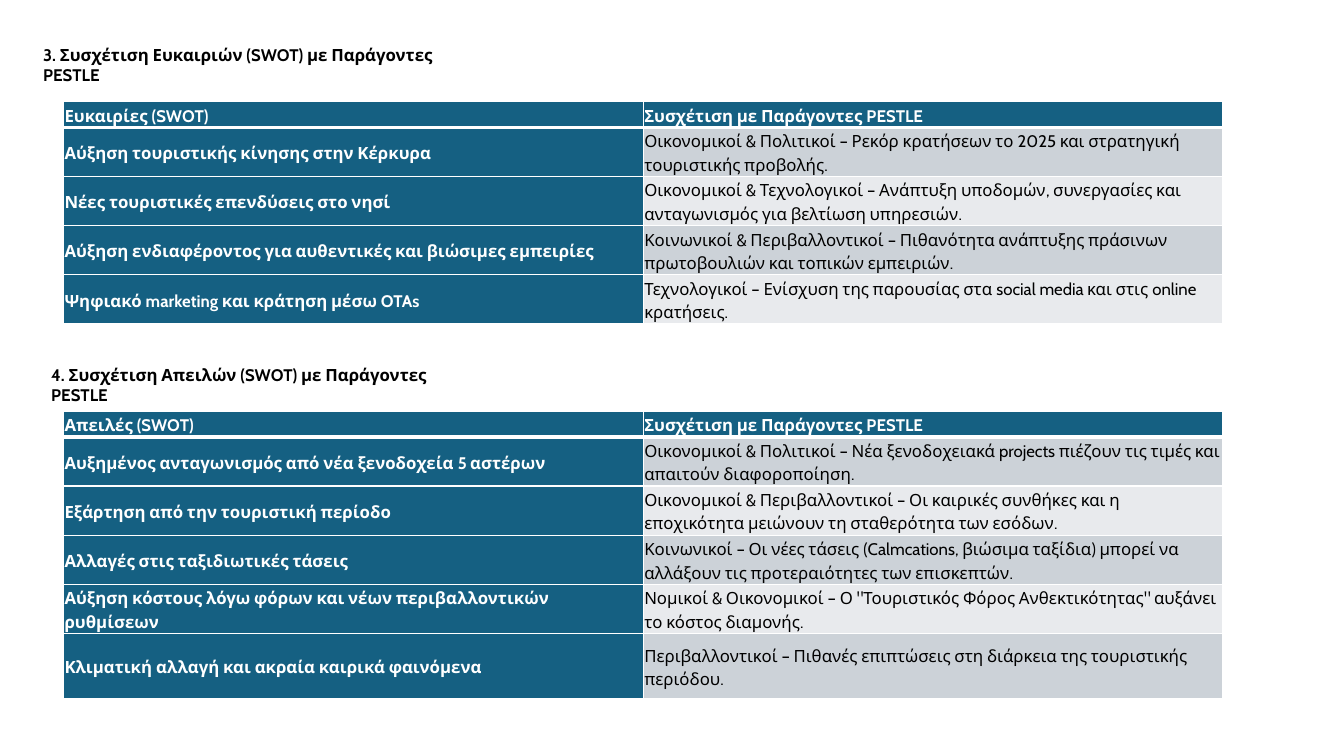
import lxml.etree
import pptx
import pptx.dml.color
import pptx.enum.text
import pptx.oxml.ns
import pptx.util

Inches = pptx.util.Inches
COLORS = {
    "white": "FFFFFF",
    "black": "000000",
    "blue": "156082",
    "gray": "CCD2D8",
    "light": "E8EAED",
}
PESTLE_HEADER = "Συσχέτιση με Παράγοντες PESTLE"
OPPORTUNITIES = [
    ("Ευκαιρίες (SWOT)", PESTLE_HEADER),
    ("Αύξηση τουριστικής κίνησης στην Κέρκυρα",
     "Οικονομικοί & Πολιτικοί – Ρεκόρ κρατήσεων το 2025 και στρατηγική τουριστικής προβολής."),
    ("Νέες τουριστικές επενδύσεις στο νησί",
     "Οικονομικοί & Τεχνολογικοί – Ανάπτυξη υποδομών, συνεργασίες και ανταγωνισμός για βελτίωση υπηρεσιών."),
    ("Αύξηση ενδιαφέροντος για αυθεντικές και βιώσιμες εμπειρίες",
     "Κοινωνικοί & Περιβαλλοντικοί – Πιθανότητα ανάπτυξης πράσινων πρωτοβουλιών και τοπικών εμπειριών."),
    ("Ψηφιακό marketing και κράτηση μέσω OTAs",
     "Τεχνολογικοί – Ενίσχυση της παρουσίας στα social media και στις online κρατήσεις."),
]
THREATS = [
    ("Απειλές (SWOT)", PESTLE_HEADER),
    ("Αυξημένος ανταγωνισμός από νέα ξενοδοχεία 5 αστέρων",
     "Οικονομικοί & Πολιτικοί – Νέα ξενοδοχειακά projects πιέζουν τις τιμές και απαιτούν διαφοροποίηση."),
    ("Εξάρτηση από την τουριστική περίοδο",
     "Οικονομικοί & Περιβαλλοντικοί – Οι καιρικές συνθήκες και η εποχικότητα μειώνουν τη σταθερότητα των εσόδων."),
    ("Αλλαγές στις ταξιδιωτικές τάσεις",
     "Κοινωνικοί – Οι νέες τάσεις (Calmcations, βιώσιμα ταξίδια) μπορεί να αλλάξουν τις προτεραιότητες των επισκεπτών."),
    ("Αύξηση κόστους λόγω φόρων και νέων περιβαλλοντικών ρυθμίσεων",
     "Νομικοί & Οικονομικοί – Ο \"Τουριστικός Φόρος Ανθεκτικότητας\" αυξάνει το κόστος διαμονής."),
    ("Κλιματική αλλαγή και ακραία καιρικά φαινόμενα",
     "Περιβαλλοντικοί – Πιθανές επιπτώσεις στη διάρκεια της τουριστικής περιόδου."),
]


def rgb(name):
    return pptx.dml.color.RGBColor.from_string(COLORS[name])


def write_text(frame, text, *, font, size, color, bold, spacing=None, after=None):
    para = frame.paragraphs[0]
    para.line_spacing = spacing
    para.space_after = None if after is None else pptx.util.Pt(after)
    span = para.add_run()
    span.text = text
    span.font.name = font
    span.font.size = pptx.util.Pt(size)
    span.font.bold = bold
    span.font.color.rgb = rgb(color)


def add_border(cell, side, width):
    qn = pptx.oxml.ns.qn
    properties = cell._tc.get_or_add_tcPr()
    line = lxml.etree.SubElement(properties, qn(f"a:ln{side}"), w=str(pptx.util.Pt(width)))
    fill = lxml.etree.SubElement(line, qn("a:solidFill"))
    lxml.etree.SubElement(fill, qn("a:srgbClr"), val=COLORS["white"])


class SwotPage:
    font = "Cabin"
    size = 12
    middle = pptx.enum.text.MSO_ANCHOR.MIDDLE

    def __init__(self, deck):
        self.page = deck.slides.add_slide(deck.slide_layouts[6])

    def heading(self, text, left, top, width):
        box = self.page.shapes.add_textbox(Inches(left), Inches(top), Inches(width), Inches(0.3))
        frame = box.text_frame
        frame.word_wrap = True
        frame.auto_size = pptx.enum.text.MSO_AUTO_SIZE.NONE
        frame.vertical_anchor = self.middle
        write_text(frame, text, font=self.font, size=self.size, color="black", bold=True)

    def table(self, rows, top, heights):
        frame = self.page.shapes.add_table(
            len(rows), 2, Inches(0.63), Inches(top), Inches(11.5), Inches(sum(heights)))
        table = frame.table
        for row, (texts, height) in enumerate(zip(rows, heights)):
            table.rows[row].height = Inches(height)
            for column, text in enumerate(texts):
                self.cell(table.cell(row, column), text, row, column)

    def cell(self, cell, text, row, column):
        strong = row == 0 or column == 0
        widths = {"L": 1, "R": 1, "T": 3 if row == 1 else 1, "B": 3 if row == 0 else 1}
        for side, width in widths.items():
            add_border(cell, side, width)
        cell.fill.solid()
        cell.fill.fore_color.rgb = rgb("blue" if strong else "gray" if row % 2 else "light")
        cell.vertical_anchor = self.middle
        cell.margin_left = cell.margin_right = Inches(0.01)
        cell.margin_top = cell.margin_bottom = Inches(0.01)
        write_text(cell.text_frame, text, font=self.font, size=self.size, bold=strong,
                   color="white" if strong else "black", spacing=1.15, after=8)


def main():
    deck = pptx.Presentation()
    deck.slide_width = Inches(13.33)
    deck.slide_height = Inches(7.5)
    swot = SwotPage(deck)
    swot.table(OPPORTUNITIES, 1.01, [0.25] + [0.48] * 4)
    swot.table(THREATS, 4.08, [0.25] + [0.48] * 4 + [0.65])
    swot.heading("4. Συσχέτιση Απειλών (SWOT) με Παράγοντες PESTLE", 0.41, 3.67, 4.22)
    swot.heading("3. Συσχέτιση Ευκαιριών (SWOT) με Παράγοντες PESTLE", 0.33, 0.49, 4.38)
    deck.save("out.pptx")


if __name__ == "__main__":
    main()
